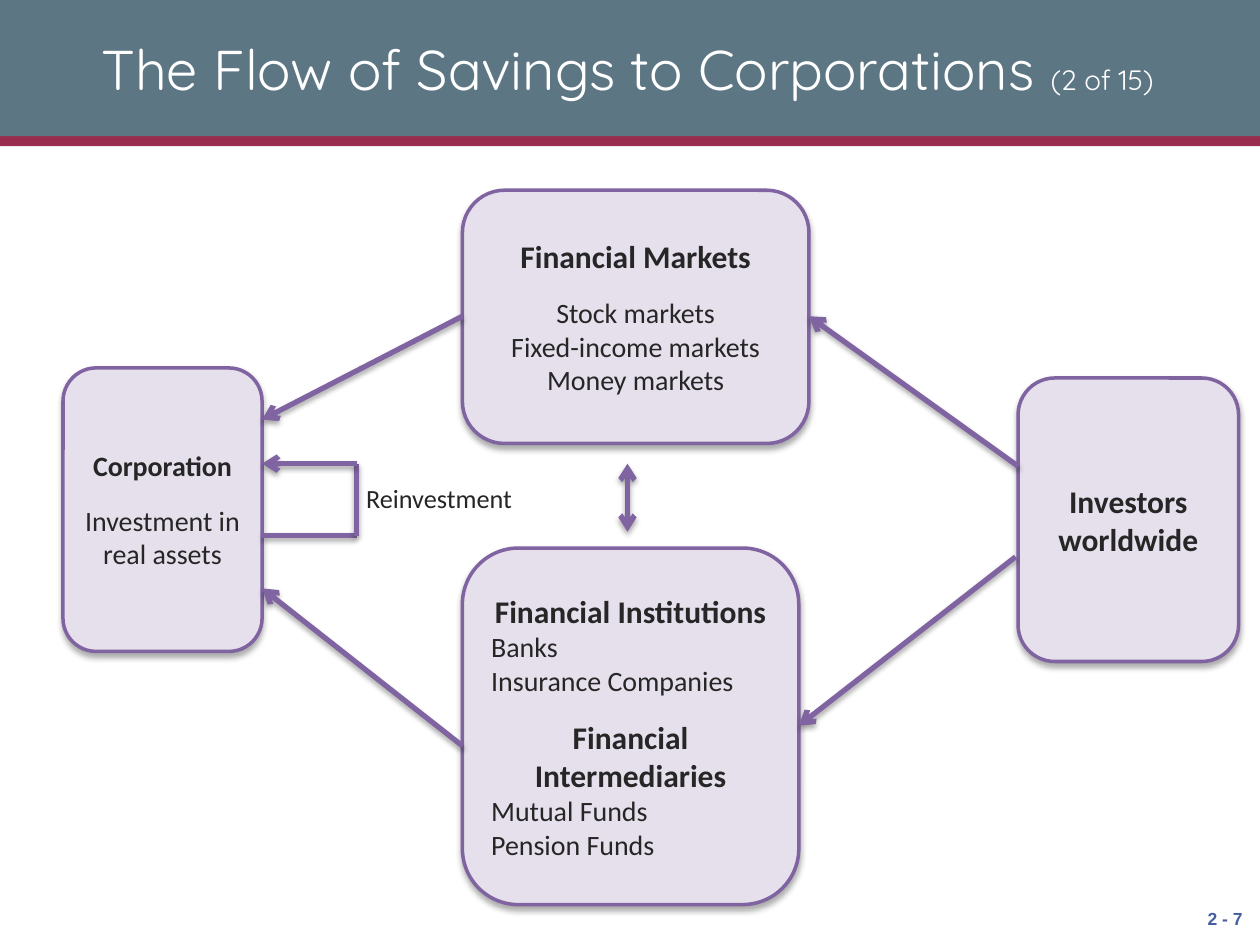
from lxml import etree
from pptx import Presentation
from pptx.dml.color import RGBColor
from pptx.enum.shapes import MSO_CONNECTOR, MSO_SHAPE
from pptx.enum.text import MSO_ANCHOR, PP_ALIGN
from pptx.oxml.ns import qn
from pptx.util import Inches, Pt

THEME = {
    "band": "5C7683", "rule": "992D4F", "title": "FFFFFF", "number": "455EA0",
    "box": "E6E0EC", "line": "8064A2", "text": "262626",
    "title_font": "Quicksand", "body_font": "Calibri", "number_font": "Arial",
    "title_size": 32, "part_size": 16, "head_size": 18, "item_size": 16,
    "label_size": 15, "number_size": 10, "gap": 12,
    "box_line": 2, "flow_line": 3,
}
# blur and distance in points, opacity in percent
BOX_SHADOW, FLOW_SHADOW = (3.5, 2.2, 32), (3.1, 1.8, 35)

TITLE, PART = "The Flow of Savings to Corporations ", "(2 of 15)"
BANDS = [((0, 1.08, 10, 0.08), "rule"), ((0, 0, 10, 1.08), "band")]

# Paragraph styles: (size, bold, alignment, starts a new group)
HEAD = ("head_size", True, PP_ALIGN.CENTER, False)
NEXT_HEAD = ("head_size", True, PP_ALIGN.CENTER, True)
SMALL_HEAD = ("item_size", True, PP_ALIGN.CENTER, False)
ITEM = ("item_size", False, PP_ALIGN.CENTER, False)
FIRST_ITEM = ("item_size", False, PP_ALIGN.CENTER, True)
LEFT_ITEM = ("item_size", False, PP_ALIGN.LEFT, False)

BOXES = {
    "corporation": ((0.5, 2.92, 1.58, 2.25), [
        ("Corporation", SMALL_HEAD), ("Investment in real assets", FIRST_ITEM)]),
    "investors": ((8.08, 3, 1.75, 2.25), [("Investors", HEAD), ("worldwide", HEAD)]),
    "markets": ((3.67, 1.51, 2.75, 2.01), [
        ("Financial Markets", HEAD), ("Stock markets", FIRST_ITEM),
        ("Fixed-income markets", ITEM), ("Money markets", ITEM)]),
    "institutions": ((3.67, 4.35, 2.67, 2.83), [
        ("Financial Institutions", HEAD),
        ("Banks", LEFT_ITEM), ("Insurance Companies", LEFT_ITEM),
        ("Financial Intermediaries", NEXT_HEAD),
        ("Mutual Funds", LEFT_ITEM), ("Pension Funds", LEFT_ITEM)]),
}


def side(name, edge, y):
    """Point at height y on the left or right edge of a box."""
    left, _, width, _ = BOXES[name][0]
    return (left + (width if edge == "right" else 0), y)


LOOP_X, LOOP_TOP, LOOP_BOTTOM = 2.83, 3.68, 4.25
# (start, end, ends that carry an arrowhead)
FLOWS = [
    ((4.98, 3.68), (4.98, 4.22), ("headEnd", "tailEnd")),
    (side("corporation", "right", LOOP_BOTTOM), (LOOP_X, LOOP_BOTTOM), ()),
    ((LOOP_X, LOOP_TOP), (LOOP_X, LOOP_BOTTOM), ()),
    ((LOOP_X, LOOP_TOP), side("corporation", "right", LOOP_TOP), ("tailEnd",)),
    (side("investors", "left", 3.7), side("markets", "right", 2.51), ("tailEnd",)),
    ((8.06, 4.42), side("institutions", "right", 5.76), ("tailEnd",)),
    (side("markets", "left", 2.51), side("corporation", "right", 3.33), ("tailEnd",)),
    (side("institutions", "left", 5.92), side("corporation", "right", 4.67), ("tailEnd",)),
]
LABELS = [
    ("Reinvestment", (2.8, 3.78, 1.37, 0.35), PP_ALIGN.CENTER, MSO_ANCHOR.TOP,
     ("body_font", "label_size", "text", False)),
    ("2 - 7", (9.46, 7.08, 0.5, 0.42), PP_ALIGN.RIGHT, MSO_ANCHOR.MIDDLE,
     ("number_font", "number_size", "number", True)),
]


def color(key):
    return RGBColor.from_string(THEME[key])


def set_font(font, face, size, color_key, bold=False):
    font.name, font.size, font.bold = THEME[face], Pt(THEME[size]), bold
    font.color.rgb = color(color_key)


def add_shadow(properties, blur, distance, opacity):
    """Put a downward black shadow in the effect list, made if missing."""
    effects = properties.find(qn("a:effectLst"))
    if effects is None:
        effects = etree.SubElement(properties, qn("a:effectLst"))
    shadow = etree.SubElement(effects, qn("a:outerShdw"), blurRad=str(Pt(blur)),
                              dist=str(Pt(distance)), dir="5400000", rotWithShape="0")
    black = etree.SubElement(shadow, qn("a:srgbClr"), val="000000")
    etree.SubElement(black, qn("a:alpha"), val=str(opacity * 1000))


def add_filled(slide, kind, place, fill):
    shape = slide.shapes.add_shape(kind, *map(Inches, place))
    shape.shadow.inherit = False
    shape.fill.solid()
    shape.fill.fore_color.rgb = color(fill)
    shape.line.fill.background()
    return shape


def add_title(slide):
    title = slide.shapes.title
    title.left, title.top, title.width, title.height = map(Inches, (0.25, 0.08, 9.46, 0.92))
    frame = title.text_frame
    frame.vertical_anchor = MSO_ANCHOR.MIDDLE
    paragraph = frame.paragraphs[0]
    paragraph.alignment = PP_ALIGN.CENTER
    for text, size in ((TITLE, "title_size"), (PART, "part_size")):
        run = paragraph.add_run()
        run.text = text
        set_font(run.font, "title_font", size, "title")
    slide.shapes._spTree.append(title._element)  # in front of the bands


def add_box(slide, place, content):
    shape = add_filled(slide, MSO_SHAPE.ROUNDED_RECTANGLE, place, "box")
    shape.line.color.rgb = color("line")
    shape.line.width = Pt(THEME["box_line"])
    add_shadow(shape._element.spPr, *BOX_SHADOW)
    frame = shape.text_frame
    frame.word_wrap = True
    frame.vertical_anchor = MSO_ANCHOR.MIDDLE
    for index, (text, (size, bold, alignment, new_group)) in enumerate(content):
        paragraph = frame.add_paragraph() if index else frame.paragraphs[0]
        paragraph.text = text
        paragraph.alignment = alignment
        if new_group:
            paragraph.space_before = Pt(THEME["gap"])
        set_font(paragraph.font, "body_font", size, "text", bold)


def add_flow(slide, start, end, arrow_ends):
    connector = slide.shapes.add_connector(
        MSO_CONNECTOR.STRAIGHT, *map(Inches, start + end))
    connector.line.color.rgb = color("line")
    connector.line.width = Pt(THEME["flow_line"])
    properties = connector._element.spPr
    for arrow_end in arrow_ends:
        etree.SubElement(properties.find(qn("a:ln")), qn(f"a:{arrow_end}"), type="arrow")
    add_shadow(properties, *FLOW_SHADOW)


def add_label(slide, text, place, alignment, anchor, style):
    frame = slide.shapes.add_textbox(*map(Inches, place)).text_frame
    frame.word_wrap = False
    frame.vertical_anchor = anchor
    paragraph = frame.paragraphs[0]
    paragraph.text = text
    paragraph.alignment = alignment
    set_font(paragraph.font, *style)


def main():
    presentation = Presentation()
    presentation.slide_width, presentation.slide_height = Inches(10), Inches(7.5)
    slide = presentation.slides.add_slide(presentation.slide_layouts[5])
    for place, fill in BANDS:
        add_filled(slide, MSO_SHAPE.RECTANGLE, place, fill)
    add_title(slide)
    for place, content in BOXES.values():
        add_box(slide, place, content)
    for flow in FLOWS:
        add_flow(slide, *flow)
    for label in LABELS:
        add_label(slide, *label)
    presentation.save("out.pptx")


if __name__ == "__main__":
    main()
